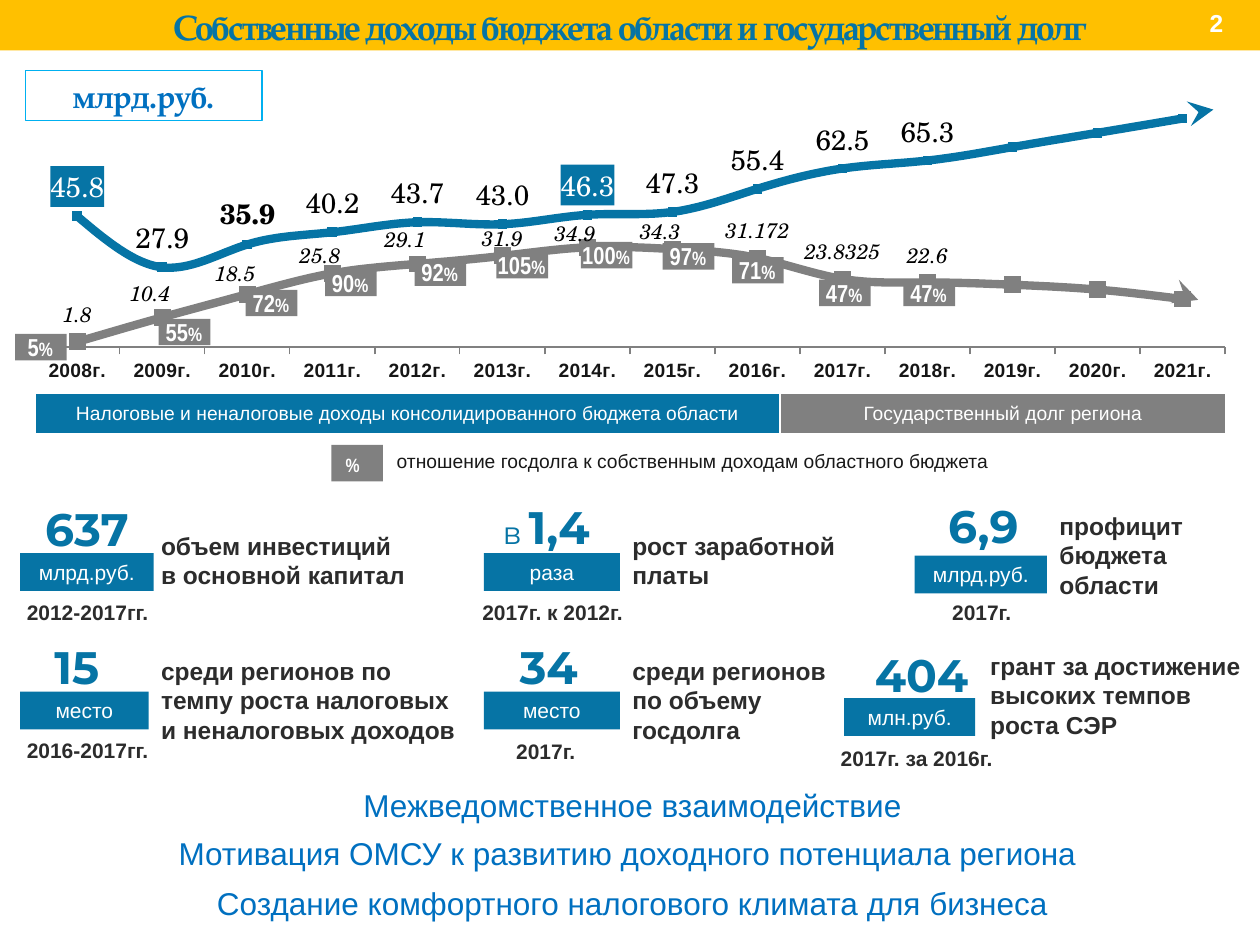
from pptx import Presentation
from pptx.chart.data import CategoryChartData
from pptx.dml.color import RGBColor
from pptx.enum.chart import XL_CHART_TYPE, XL_LABEL_POSITION, XL_MARKER_STYLE, XL_TICK_LABEL_POSITION, XL_TICK_MARK
from pptx.enum.shapes import MSO_CONNECTOR, MSO_SHAPE
from pptx.enum.text import MSO_ANCHOR, PP_ALIGN
from pptx.oxml import parse_xml
from pptx.oxml.ns import nsdecls, qn
from pptx.util import Inches, Pt

BLUE, GRAY, SKY, DARK, WHITE = "0674A5", "808080", "0070C0", "2C2C2C", "FFFFFF"
SERIF, BOOK, SANS, SLIM, BIG = "TeX Gyre Pagella", "TeX Gyre Schola", "Arial", "Arial Narrow", "Montserrat"


def style(size, color, name=SANS, **more):
    return dict(size=size, color=color, name=name, **more)


HEAD = style(20, BLUE, SERIF, bold=True)
PAGE = style(14, WHITE, bold=True)
UNIT = style(18, SKY, SERIF, bold=True)
KEY = style(11, "181818")
BAND = style(11, WHITE)
RATE = style(14, WHITE, SLIM, bold=True)
SIGN = style(11, WHITE, SLIM, bold=True)
NOTE = style(14, DARK, bold=True)
NUM = style(26, BLUE, BIG, bold=True)
PRE = style(18, BLUE, BIG)
TAG = style(12, WHITE)
TIME = style(12, DARK, bold=True)
GOAL = style(18, SKY)

TITLE = "Собственные доходы бюджета области и государственный долг"
YEARS = [f"{y}г." for y in range(2008, 2022)]
INCOME = [45.8, 27.9, 35.9, 40.2, 43.7, 43, 46.3, 47.3, 55.4, 62.5, 65.3, 70, 75, 80]
DEBT = [1.8, 10.4, 18.5, 25.8, 29.1, 31.9, 34.9, 34.3, 31.172, 23.8325, 22.6, 21.8, 20.1, 16.8]
HIDE = (11, 12, 13)
# label shifts as shares of the chart size
SHIFT = {1: (-.01, .01), 2: (-.01, .02), 3: (-.01, .03), 4: (-.01, .01),
         5: (0, .03), 6: (-.01, .04), 7: (-.01, .03)}
LEGEND = [("Налоговые и неналоговые доходы консолидированного бюджета области", 5.91, BLUE),
          ("Государственный долг региона", 3.54, GRAY)]
RATES = [("5", .12, 2.65), ("55", 1.26, 2.53), ("72", 1.95, 2.3), ("90", 2.58, 2.14),
         ("92", 3.29, 2.06), ("105", 3.94, 2), ("100", 4.61, 1.92), ("97", 5.26, 1.93),
         ("71", 5.81, 2.04), ("47", 6.5, 2.22), ("47", 7.17, 2.22)]
# each part: text or runs, then its box
CARDS = [
    (("объем инвестиций \nв основной капитал", (1.18, 4.16, 2.36, .57)), ("637", (.08, 3.92, 1.22, .54)),
     ("млрд.руб.", (.16, 4.39, 1.06, .3)), ("2012-2017гг.", (0, 4.71, 1.39, .3))),
    (("рост заработной платы", (4.92, 4.16, 2.13, .57)),
     ([("в", PRE), (" ", dict(NUM, size=14)), ("1,4", NUM)], (3.7, 3.91, 1.27, .54)),
     ("раза", (3.84, 4.39, 1.08, .3)), ("2017г. к 2012г.", (3.69, 4.71, 1.39, .3))),
    (("среди регионов по темпу роста налоговых и неналоговых доходов", (1.18, 5.15, 2.56, .81)),
     ("15", (0, 5.02, 1.22, .54)),
     ("место", (.16, 5.49, 1.02, .3)), ("2016-2017гг.", (0, 5.8, 1.39, .3))),
    (("среди регионов \nпо объему госдолга", (4.92, 5.15, 1.86, .81)), ("34", (3.74, 5.02, 1.23, .54)),
     ("место", (3.84, 5.49, 1.08, .3)), ("2017г. ", (3.66, 5.81, 1.39, .3))),
    (("профицит бюджета области", (8.31, 4, 1.57, .81)), ("6,9", (7.17, 3.9, 1.27, .54)),
     ("млрд.руб.", (7.26, 4.41, 1.05, .3)), ("2017г. ", (7.2, 4.71, 1.23, .3))),
    (("грант за достижение высоких темпов роста СЭР", (7.76, 5.11, 2.35, .81)), ("404", (6.7, 5.08, 1.23, .54)),
     ("млн.руб.", (6.7, 5.54, 1.04, .3)), ("2017г. за 2016г.", (6.5, 5.87, 1.55, .3))),
]
GOALS = [("Межведомственное взаимодействие", (.08, 6.19, 9.88, .4)),
         ("Мотивация ОМСУ к развитию доходного потенциала региона", (.08, 6.57, 9.8, .4)),
         ("Создание комфортного налогового климата для бизнеса", (.12, 6.97, 9.8, .4))]
ARROWS = [((9.45, .9, 9.63, .87), BLUE), ((9.34, 2.32, 9.51, 2.38), GRAY)]


def rgb(code):
    return RGBColor.from_string(code)


def paint(target, code):
    target.fill.solid()
    target.fill.fore_color.rgb = rgb(code)


def dress(font, form):
    for key, val in form.items():
        if key == "color":
            font.color.rgb = rgb(val)
        else:
            setattr(font, key, Pt(val) if key == "size" else val)


def write(frame, text, form, align=PP_ALIGN.CENTER, anchor=MSO_ANCHOR.MIDDLE, wrap=True):
    """Fill a frame with one paragraph; text is a string or (string, style) runs."""
    frame.word_wrap, frame.vertical_anchor = wrap, anchor
    para = frame.paragraphs[0]
    para.alignment = align
    for part, look in [(text, form)] if isinstance(text, str) else text:
        for n, line in enumerate(part.split("\n")):
            if n:
                para.add_line_break()
            run = para.add_run()
            run.text = line
            dress(run.font, look)


def label(home, text, box, form, **more):
    write(home.add_textbox(*map(Inches, box)).text_frame, text, form, **more)


def block(home, box, fill=None, edge=None):
    shape = home.add_shape(MSO_SHAPE.RECTANGLE, *map(Inches, box))
    shape.shadow.inherit = False
    if fill:
        paint(shape, fill)
    else:
        shape.fill.background()
    if edge:
        shape.line.color.rgb, shape.line.width = rgb(edge), Pt(.75)
    else:
        shape.line.fill.background()
    return shape


def layout(x, y, **more):
    vals = {**more, "x": x, "y": y}
    tags = "".join(f'<c:{k} val="{vals[k]}"/>' for k in
                   ("layoutTarget", "xMode", "yMode", "x", "y", "w", "h") if k in vals)
    return parse_xml(f'<c:layout {nsdecls("c")}><c:manualLayout>{tags}</c:manualLayout></c:layout>')


def point(line, idx, form):
    """Give one point its own label and return the label's element."""
    lab = line.points[idx].data_label
    dress(lab.font, form)
    lab.position = XL_LABEL_POSITION.ABOVE
    return line._element.xpath(f'c:dLbls/c:dLbl[c:idx/@val="{idx}"]')[0]


def graph(home):
    data = CategoryChartData()
    data.categories = YEARS
    data.add_series("Series 1", INCOME)
    data.add_series("Series 2", DEBT)
    box = map(Inches, (.12, .58, 9.76, 2.64))
    chart = home.add_chart(XL_CHART_TYPE.LINE_MARKERS, *box, data).chart
    chart.has_legend = chart.has_title = False
    dress(chart.font, style(10, DARK))
    plot = chart.plots[0]
    plot.vary_by_categories = False
    area = chart._chartSpace.chart.plotArea
    for old in area.findall(qn("c:layout")):
        area.remove(old)
    area.insert(0, layout(.016, .051, layoutTarget="inner", xMode="edge", yMode="edge", w=.968, h=.773))

    val, cat = chart.value_axis, chart.category_axis
    val.minimum_scale, val.maximum_scale = 0, 90
    val.has_major_gridlines = val.visible = False
    cat.major_tick_mark = XL_TICK_MARK.OUTSIDE
    cat.tick_label_position = XL_TICK_LABEL_POSITION.LOW
    cat.format.line.color.rgb = rgb(GRAY)
    dress(cat.tick_labels.font, style(11, "161616", bold=True))

    looks = [(BLUE, 5, style(16, "000000", BOOK), "0.0"),
             (GRAY, 9, style(12, "000000", BOOK, italic=True), "General")]
    for line, (color, size, form, code) in zip(plot.series, looks):
        line.smooth = True
        line.format.line.color.rgb, line.format.line.width = rgb(color), Pt(4.75)
        line.marker.style, line.marker.size = XL_MARKER_STYLE.SQUARE, size
        paint(line.marker.format, color)
        line.marker.format.line.color.rgb = rgb(color)
        labs = line.data_labels
        labs.show_value, labs.position = True, XL_LABEL_POSITION.ABOVE
        labs.number_format, labs.number_format_is_linked = code, False
        dress(labs.font, form)
        for idx in HIDE:
            elem = point(line, idx, form)
            for kid in list(elem)[1:]:
                elem.remove(kid)
            elem.append(parse_xml(f'<c:delete {nsdecls("c")} val="1"/>'))

    income, debt = plot.series
    form = looks[0][2]
    point(income, 2, dict(form, bold=True))
    for idx in (0, 6):
        elem = point(income, idx, dict(form, color=WHITE))
        for old in elem.findall(qn("c:spPr")):
            elem.remove(old)
        elem.find(qn("c:txPr")).addprevious(parse_xml(
            f'<c:spPr {nsdecls("c", "a")}><a:solidFill><a:srgbClr val="{BLUE}"/></a:solidFill></c:spPr>'))
    for idx, (x, y) in SHIFT.items():
        point(debt, idx, looks[1][2]).insert(1, layout(x, y))


def legend(home):
    table = home.add_table(1, 2, *map(Inches, (.28, 3.12, 9.45, .32))).table
    table.rows[0].height = Inches(.32)
    for n, (text, wide, fill) in enumerate(LEGEND):
        table.columns[n].width = Inches(wide)
        cell = table.cell(0, n)
        cell.margin_left = cell.margin_right = cell.margin_top = Inches(.01)
        cell.margin_bottom = 0
        write(cell.text_frame, text, BAND)
        cell.vertical_anchor = MSO_ANCHOR.MIDDLE
        paint(cell, fill)
        for n, side in enumerate(("lnL", "lnR", "lnT", "lnB")):
            cell._tc.tcPr.insert(n, parse_xml(
                f'<a:{side} {nsdecls("a")} w="12700"><a:solidFill><a:srgbClr val="{WHITE}"/></a:solidFill></a:{side}>'))


def badge(home, text, box, spot):
    group = home.add_group_shape().shapes
    block(group, box, GRAY)
    label(group, text, spot, SIGN)


def card(home, note, num, unit, time):
    group = home.add_group_shape().shapes
    label(group, *note, NOTE, align=PP_ALIGN.LEFT)
    label(group, *num, NUM)
    write(block(group, unit[1], BLUE).text_frame, unit[0], TAG)
    label(group, *time, TIME)


def arrow(home, ends, color):
    line = home.add_connector(MSO_CONNECTOR.STRAIGHT, *map(Inches, ends))
    line.line.color.rgb, line.line.width = rgb(color), Pt(4.75)
    line.line._get_or_add_ln().append(parse_xml(f'<a:tailEnd {nsdecls("a")} type="stealth"/>'))
    line._element.spPr.append(parse_xml(f'<a:effectLst {nsdecls("a")}/>'))


def main():
    prs = Presentation()
    prs.slide_width, prs.slide_height = Inches(10), Inches(7.5)
    slide = prs.slides.add_slide(prs.slide_layouts[5])
    home, title = slide.shapes, slide.shapes.title
    title.left, title.top, title.width, title.height = map(Inches, (0, -.01, 10, .44))
    write(title.text_frame, TITLE, HEAD)
    title.text_frame.paragraphs[0].runs[0].font._element.set("spc", "-100")
    bar = block(home, (0, 0, 10, .4), "FFC000")
    title._element.addprevious(bar._element)
    label(home, "2", (9.33, 0, .65, .36), PAGE)
    legend(home)
    graph(home)
    write(block(home, (.2, .56, 1.88, .4), edge="00B0F0").text_frame, "млрд.руб.", UNIT, anchor=MSO_ANCHOR.TOP)
    label(home, "отношение госдолга к собственным доходам областного бюджета",
          (3.05, 3.51, 4.97, .29), KEY, align=PP_ALIGN.LEFT, wrap=False)
    badge(home, "%", (2.63, 3.53, .41, .29), (2.48, 3.54, .64, .29))
    for text, x, y in RATES:
        badge(home, [(text, RATE), ("%", SIGN)], (x, y, .41, .21), (x - .12, y - .07, .64, .34))
    for parts in CARDS:
        card(home, *parts)
    for text, box in GOALS:
        label(home, text, box, GOAL, anchor=MSO_ANCHOR.TOP)
    for ends, color in ARROWS:
        arrow(home, ends, color)
    prs.save("out.pptx")


if __name__ == "__main__":
    main()
